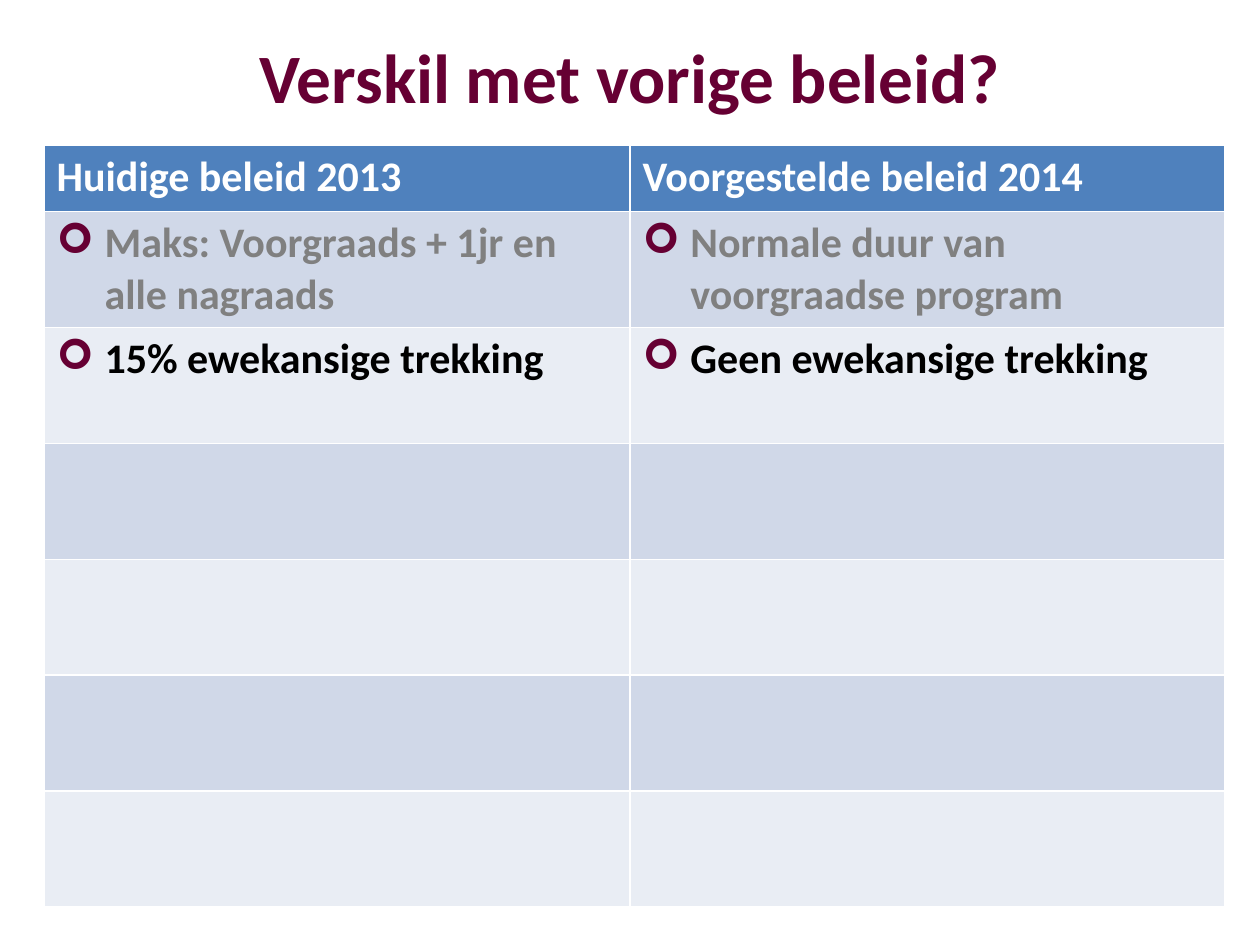
import dataclasses

import lxml.etree
import pptx
import pptx.dml.color
import pptx.enum.text
import pptx.oxml.ns
import pptx.util


@dataclasses.dataclass(frozen=True)
class Theme:
    font: str = "Calibri"
    title: float = 39.6
    body: float = 24
    wine: str = "660033"
    head: str = "4F81BD"
    bands: tuple = ("D0D8E8", "E9EDF4")
    white: str = "FFFFFF"
    grey: str = "808080"
    black: str = "000000"


THEME = Theme()
WIDE, HIGH = pptx.util.Inches(10), pptx.util.Inches(7.5)
INDENT = pptx.util.Inches(0.38)

HEADS = ("Huidige beleid 2013", "Voorgestelde beleid 2014")
POINTS = (
    (THEME.grey, ("Maks: Voorgraads + 1jr en alle nagraads",
                  "Normale duur van voorgraadse program")),
    (THEME.black, ("15% ewekansige trekking", "Geen ewekansige trekking")),
)
ROWS = 6  # body rows, the last ones left open
HEAD_PART = 0.53 / 6.05
LEFT_PART = 4.65 / 9.37


def rgb(code):
    return pptx.dml.color.RGBColor.from_string(code)


def share(left, top, width, height):
    """Turn shares of the slide into a box in EMU."""
    return int(left * WIDE), int(top * HIGH), int(width * WIDE), int(height * HIGH)


def write(para, text, size, color):
    run = para.add_run()
    run.text = text
    font = run.font
    font.name, font.size, font.bold = THEME.font, pptx.util.Pt(size), True
    font.color.rgb = rgb(color)


def bullet(para):
    props = para._p.get_or_add_pPr()
    props.set("marL", str(INDENT))
    props.set("indent", str(-INDENT))
    qn = pptx.oxml.ns.qn
    tint = lxml.etree.SubElement(props, qn("a:buClr"))
    lxml.etree.SubElement(tint, qn("a:srgbClr"), val=THEME.wine)
    lxml.etree.SubElement(props, qn("a:buFont"), typeface="Wingdings")
    lxml.etree.SubElement(props, qn("a:buChar"), char="➢")


def paint(cell, color):
    cell.fill.solid()
    cell.fill.fore_color.rgb = rgb(color)


def add_title(slide, box):
    title = slide.shapes.title
    title.left, title.top, title.width, title.height = box
    frame = title.text_frame
    frame.vertical_anchor = pptx.enum.text.MSO_ANCHOR.MIDDLE
    para = frame.paragraphs[0]
    para.alignment = pptx.enum.text.PP_ALIGN.CENTER
    write(para, "Verskil met vorige beleid?", THEME.title, THEME.wine)


def add_grid(slide, box):
    """Compare both policies; the table style draws the white rules."""
    width, height = box[2:]
    table = slide.shapes.add_table(ROWS + 1, len(HEADS), *box).table
    table.columns[0].width = int(width * LEFT_PART)
    table.columns[1].width = width - table.columns[0].width
    top = int(height * HEAD_PART)
    for index, row in enumerate(table.rows):
        row.height = (height - top) // ROWS if index else top
        for cell in row.cells:
            paint(cell, THEME.bands[(index - 1) % 2] if index else THEME.head)

    for col, text in enumerate(HEADS):
        write(table.cell(0, col).text_frame.paragraphs[0], text, THEME.body, THEME.white)
    for index, (color, texts) in enumerate(POINTS, 1):
        for col, text in enumerate(texts):
            para = table.cell(index, col).text_frame.paragraphs[0]
            bullet(para)
            write(para, text, THEME.body, color)


def main():
    deck = pptx.Presentation()
    deck.slide_width, deck.slide_height = WIDE, HIGH
    slide = deck.slides.add_slide(deck.slide_layouts[5])
    add_title(slide, share(0.05, 0.03, 0.9, 0.1))
    add_grid(slide, (pptx.util.Inches(0.35), pptx.util.Inches(1.15),
                     pptx.util.Inches(9.37), pptx.util.Inches(6.05)))
    deck.save("out.pptx")


if __name__ == "__main__":
    main()
